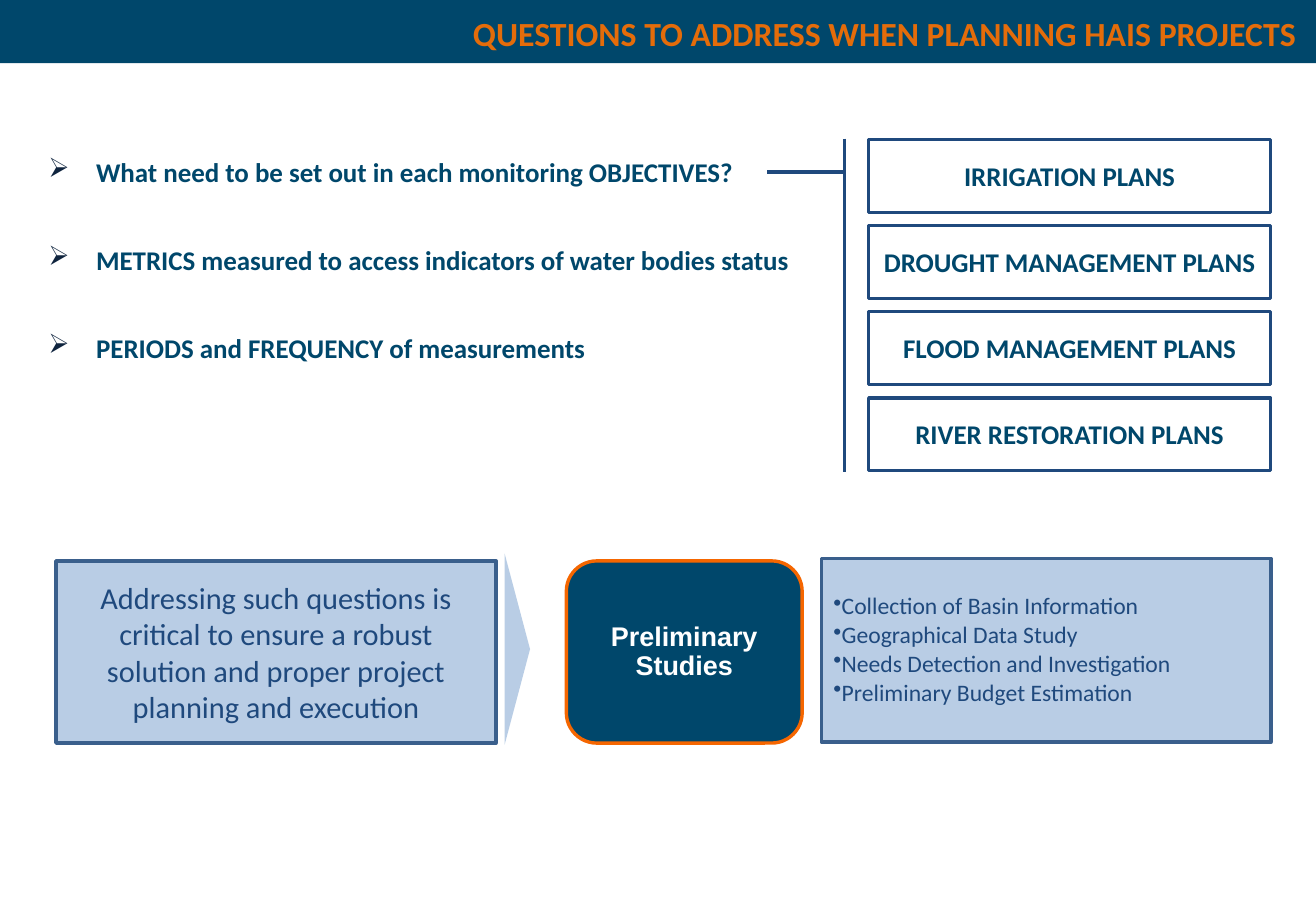
from dataclasses import dataclass

import lxml.etree
import pptx
import pptx.dml.color
import pptx.enum.shapes
import pptx.enum.text
import pptx.oxml.ns
import pptx.util

Cm, Pt = pptx.util.Cm, pptx.util.Pt
RGB = pptx.dml.color.RGBColor.from_string
SHAPE = pptx.enum.shapes.MSO_SHAPE
ALIGN = pptx.enum.text.PP_ALIGN
ANCHOR = pptx.enum.text.MSO_ANCHOR
qn = pptx.oxml.ns.qn


@dataclass(frozen=True)
class Theme:
    font: str = "Calibri"
    badge_font: str = "Arial"
    navy: str = "00476B"
    blue: str = "1F497D"
    panel: str = "B9CDE5"
    panel_line: str = "3A5F8C"
    orange: str = "E46C0A"
    badge_line: str = "F56600"
    bullet: str = "0F243E"
    white: str = "FFFFFF"
    title_size: int = 20
    body_size: int = 16
    statement_size: int = 18
    list_size: int = 14
    line_width: int = 2


theme = Theme()


def add_box(kind, left, top, width, height, fill, line=None):
    box = slide.shapes.add_shape(kind, Cm(left), Cm(top), Cm(width), Cm(height))
    box.shadow.inherit = False
    box.fill.solid()
    box.fill.fore_color.rgb = RGB(fill)
    if line:
        box.line.color.rgb = RGB(line)
        box.line.width = Pt(theme.line_width)
    else:
        box.line.fill.background()
    box.text_frame.word_wrap = True
    box.text_frame.vertical_anchor = ANCHOR.MIDDLE
    return box


def write(para, text, size, color, bold=False, align=ALIGN.CENTER, font=theme.font,
          bullet=None, hanging=0.0):
    para.alignment = align
    if bullet:
        props = para._p.get_or_add_pPr()
        props.set("marL", str(Cm(hanging)))
        props.set("indent", str(-Cm(hanging)))
        bullet_color = lxml.etree.SubElement(props, qn("a:buClr"))
        lxml.etree.SubElement(bullet_color, qn("a:srgbClr")).set("val", bullet[1])
        lxml.etree.SubElement(props, qn("a:buChar")).set("char", bullet[0])
    span = para.add_run()
    span.text = text
    span.font.name = font
    span.font.size = Pt(size)
    span.font.bold = bold
    span.font.color.rgb = RGB(color)


deck = pptx.Presentation()
deck.slide_width, deck.slide_height = Cm(27.51), Cm(19.05)
slide = deck.slides.add_slide(deck.slide_layouts[5])

# Title on its bar, with the bar behind it
bar = add_box(SHAPE.RECTANGLE, 0, 0, 27.51, 1.32, theme.navy)
slide.shapes._spTree.insert(2, bar._element)
title = slide.shapes.title
title.left, title.top, title.width, title.height = Cm(3.56), Cm(0.13), Cm(23.8), Cm(1.35)
title.text_frame.vertical_anchor = ANCHOR.TOP
write(title.text_frame.paragraphs[0], "QUESTIONS TO ADDRESS WHEN PLANNING HAIS PROJECTS",
      theme.title_size, theme.orange, bold=True, align=ALIGN.RIGHT)

# Questions
questions = [
    "What need to be set out in each monitoring OBJECTIVES?",
    "METRICS measured to access indicators of water bodies status",
    "PERIODS and FREQUENCY of measurements",
]
box = slide.shapes.add_textbox(Cm(0.76), Cm(3.12), Cm(17), Cm(4.9))
box.text_frame.word_wrap = True
for index, question in enumerate(questions):
    para = box.text_frame.add_paragraph() if index else box.text_frame.paragraphs[0]
    write(para, question, theme.body_size, theme.navy, bold=True, align=ALIGN.LEFT,
          bullet=("➢", theme.bullet), hanging=1)
    if index:
        para.space_before = Pt(33)

# Plans
plans = ["IRRIGATION PLANS", "DROUGHT MANAGEMENT PLANS",
         "FLOOD MANAGEMENT PLANS", "RIVER RESTORATION PLANS"]
for index, plan in enumerate(plans):
    box = add_box(SHAPE.RECTANGLE, 18.16, 2.92 + 1.8 * index, 8.4, 1.52,
                  theme.white, theme.blue)
    frame = box.text_frame
    frame.margin_left = frame.margin_right = frame.margin_top = frame.margin_bottom = 0
    write(frame.paragraphs[0], plan, theme.body_size, theme.navy, bold=True)

# Bracket from the first question to the plans
for start_x, start_y, end_x, end_y in [(17.65, 2.9, 17.65, 9.88), (17.65, 3.6, 16.03, 3.6)]:
    line = slide.shapes.add_connector(pptx.enum.shapes.MSO_CONNECTOR.STRAIGHT,
                                      Cm(start_x), Cm(start_y), Cm(end_x), Cm(end_y))
    line.line.color.rgb = RGB(theme.blue)
    line.line.width = Pt(theme.line_width)
    lxml.etree.SubElement(line._element.spPr, qn("a:effectLst"))

# Statement and the arrowhead beside it
statement = add_box(SHAPE.RECTANGLE, 1.17, 11.73, 9.2, 3.81, theme.panel, theme.panel_line)
write(statement.text_frame.paragraphs[0],
      "Addressing such questions is critical to ensure a robust solution "
      "and proper project planning and execution",
      theme.statement_size, theme.blue)
pointer = add_box(SHAPE.ISOSCELES_TRIANGLE, 8.82, 13.31, 3.99, 0.53, theme.panel)
pointer.rotation = 90

# Preliminary studies
badge = add_box(SHAPE.ROUNDED_RECTANGLE, 11.84, 11.73, 4.93, 3.81,
                theme.navy, theme.badge_line)
para = badge.text_frame.paragraphs[0]
write(para, "Preliminary Studies", theme.body_size, theme.white, bold=True,
      font=theme.badge_font)
para.line_spacing = 0.9

# Study list
studies = ["Collection of Basin Information", "Geographical Data Study",
           "Needs Detection and Investigation", "Preliminary Budget Estimation"]
panel = add_box(SHAPE.RECTANGLE, 17.17, 11.68, 9.4, 3.84, theme.panel, theme.panel_line)
for index, study in enumerate(studies):
    para = panel.text_frame.add_paragraph() if index else panel.text_frame.paragraphs[0]
    write(para, study, theme.list_size, theme.blue, align=ALIGN.LEFT,
          bullet=("•", theme.blue))
    para.line_spacing = 0.9
    para.space_after = Pt(2)

deck.save("out.pptx")
